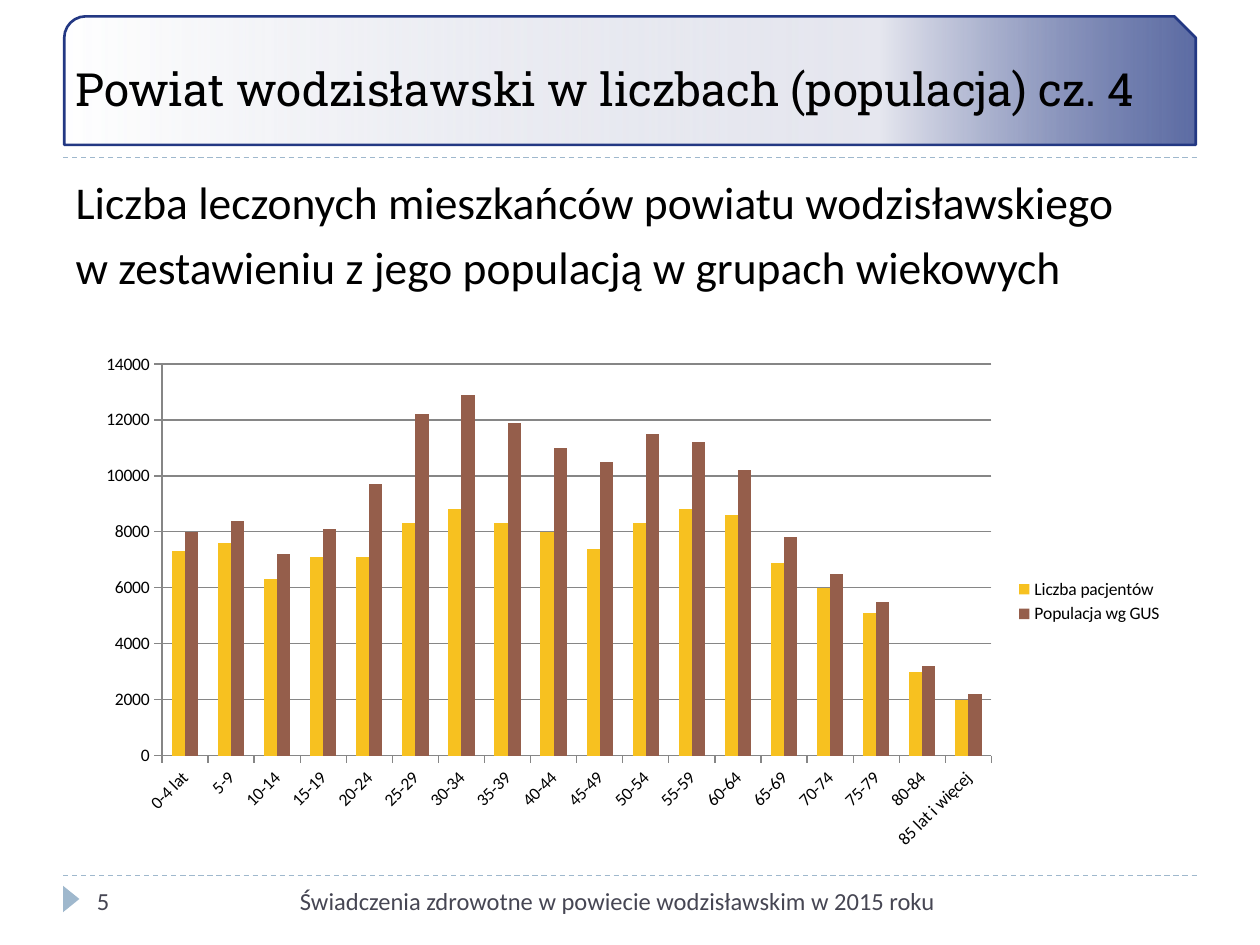
from lxml.etree import SubElement
from pptx import Presentation
from pptx.chart.data import CategoryChartData
from pptx.dml.color import RGBColor
from pptx.enum.chart import XL_CHART_TYPE, XL_LEGEND_POSITION, XL_TICK_MARK
from pptx.enum.dml import MSO_LINE
from pptx.enum.shapes import MSO_CONNECTOR, MSO_SHAPE
from pptx.enum.text import MSO_ANCHOR, MSO_AUTO_SIZE, PP_ALIGN
from pptx.oxml import parse_xml
from pptx.oxml.ns import nsdecls, qn
from pptx.util import Inches, Pt

NAVY, BLUE, SLATE, BLACK, GREY = "233883", "9FB8CD", "464653", "000000", "868686"
BODY_FONT, TITLE_FONT = "Calibri", "Roboto Slab"

AGE_GROUPS = (["0-4 lat"] + [f"{age}-{age + 4}" for age in range(5, 85, 5)]
              + ["85 lat i więcej"])
SERIES = [
    ("Liczba pacjentów", "F7C120",
     [7300, 7600, 6300, 7100, 7100, 8300, 8800, 8300, 8000,
      7400, 8300, 8800, 8600, 6900, 6000, 5100, 3000, 2000]),
    ("Populacja wg GUS", "955E4B",
     [8000, 8400, 7200, 8100, 9700, 12200, 12900, 11900, 11000,
      10500, 11500, 11200, 10200, 7800, 6500, 5500, 3200, 2200]),
]
# position, colour and opacity in percent, running from right to left
BANNER_STOPS = [(0, NAVY, 73), (28, "E6E7EF", 100), (100, "CCD0E0", 0)]


def color(value):
    return RGBColor.from_string(value)


def box(left, top, width, height):
    return [Inches(length) for length in (left, top, width, height)]


def place(shape, *position):
    shape.left, shape.top, shape.width, shape.height = box(*position)


def style_font(font, size, value, name=BODY_FONT):
    font.size, font.name, font.bold = Pt(size), name, False
    font.color.rgb = color(value)


def add_run(paragraph, text, size, value, name=BODY_FONT):
    run = paragraph.add_run()
    run.text = text
    style_font(run.font, size, value, name)


def add_divider(slide, top):
    divider = slide.shapes.add_connector(
        MSO_CONNECTOR.STRAIGHT, Inches(0.5), Inches(top), Inches(9.5), Inches(top))
    divider.line.color.rgb = color(BLUE)
    divider.line.width = Pt(0.75)
    divider.line.dash_style = MSO_LINE.DASH
    SubElement(divider._element.spPr, qn("a:effectLst"))


def add_banner(slide):
    banner = slide.shapes.add_shape(
        MSO_SHAPE.SNIP_ROUND_RECTANGLE, *box(0.51, 0.13, 8.98, 1.02))
    banner.shadow.inherit = False
    banner.line.color.rgb = color(NAVY)
    banner.line.width = Pt(1.5)
    stops = "".join(
        f'<a:gs pos="{pos * 1000}"><a:srgbClr val="{value}">'
        f'<a:alpha val="{alpha * 1000}"/></a:srgbClr></a:gs>'
        for pos, value, alpha in BANNER_STOPS)
    gradient = parse_xml(
        f'<a:gradFill {nsdecls("a")} rotWithShape="1"><a:gsLst>{stops}</a:gsLst>'
        '<a:lin ang="10800000" scaled="0"/></a:gradFill>')
    banner._element.spPr.find(qn("a:prstGeom")).addnext(gradient)


def add_page_marker(slide):
    marker = slide.shapes.add_shape(
        MSO_SHAPE.ISOSCELES_TRIANGLE, *box(0.46, 7.07, 0.21, 0.13))
    marker.rotation = 90
    marker.shadow.inherit = False
    marker.fill.solid()
    marker.fill.fore_color.rgb = color(BLUE)
    marker.line.fill.background()


def add_footer_text(slide, text, position, align):
    frame = slide.shapes.add_textbox(*box(*position)).text_frame
    frame.word_wrap = True
    frame.paragraphs[0].alignment = align
    add_run(frame.paragraphs[0], text, 14, SLATE)


def fill_title(slide, text):
    title = slide.shapes.title
    place(title, 0.5, 0.52, 9, 0.71)
    frame = title.text_frame
    frame.auto_size = MSO_AUTO_SIZE.NONE
    frame.vertical_anchor = MSO_ANCHOR.BOTTOM
    frame.margin_bottom = Inches(0.31)
    frame.paragraphs[0].alignment = PP_ALIGN.LEFT
    add_run(frame.paragraphs[0], text, 26.1, BLACK, TITLE_FONT)
    slide.shapes._spTree.append(title._element)  # in front of the banner


def fill_body(slide, lines):
    body = slide.placeholders[1]
    place(body, 0.5, 1.33, 9, 5.4)
    frame = body.text_frame
    frame.auto_size = MSO_AUTO_SIZE.NONE
    for index, line in enumerate(lines):
        paragraph = frame.add_paragraph() if index else frame.paragraphs[0]
        paragraph.space_before = Pt(6)
        properties = paragraph._p.get_or_add_pPr()
        properties.set("marL", "0")
        properties.set("indent", "0")
        SubElement(properties, qn("a:buNone"))
        add_run(paragraph, line, 26, BLACK)


def add_population_chart(slide):
    data = CategoryChartData()
    data.categories = AGE_GROUPS
    for name, _, values in SERIES:
        data.add_series(name, values)
    chart = slide.shapes.add_chart(
        XL_CHART_TYPE.COLUMN_CLUSTERED, *box(0.67, 2.73, 8.66, 4.09), data).chart
    style_font(chart.font, 10, BLACK)
    chart.has_title = False
    chart.has_legend = True
    chart.legend.position = XL_LEGEND_POSITION.RIGHT
    chart.legend.include_in_layout = False

    plot = chart.plots[0]
    plot.gap_width, plot.overlap, plot.vary_by_categories = 150, 0, False
    for series, (_, value, _) in zip(plot.series, SERIES):
        series.format.fill.solid()
        series.format.fill.fore_color.rgb = color(value)

    ages, counts = chart.category_axis, chart.value_axis
    for axis in (ages, counts):
        axis.major_tick_mark = XL_TICK_MARK.OUTSIDE
        axis.minor_tick_mark = XL_TICK_MARK.NONE
        axis.format.line.color.rgb = color(GREY)
        style_font(axis.tick_labels.font, 10, BLACK)
    ages._element.txPr.find(qn("a:bodyPr")).set("rot", "-2700000")
    counts.minimum_scale, counts.maximum_scale, counts.major_unit = 0, 14000, 2000
    counts.has_major_gridlines = True
    counts.major_gridlines.format.line.color.rgb = color(GREY)


def main():
    presentation = Presentation()
    presentation.slide_width, presentation.slide_height = Inches(10), Inches(7.5)
    slide = presentation.slides.add_slide(presentation.slide_layouts[1])

    # Frame of the slide
    for top in (6.95, 1.25):
        add_divider(slide, top)
    add_page_marker(slide)
    add_banner(slide)

    # Heading and introduction
    fill_title(slide, "Powiat wodzisławski w liczbach (populacja) cz. 4")
    fill_body(slide, ["Liczba leczonych mieszkańców powiatu wodzisławskiego",
                      "w zestawieniu z jego populacją w grupach wiekowych"])

    # Footer
    add_footer_text(slide, "5", (0.67, 6.98, 2.17, 0.4), PP_ALIGN.LEFT)
    add_footer_text(slide, "Świadczenia zdrowotne w powiecie wodzisławskim w 2015 roku",
                    (2.09, 6.98, 5.43, 0.4), PP_ALIGN.RIGHT)

    add_population_chart(slide)
    presentation.save("out.pptx")


if __name__ == "__main__":
    main()
